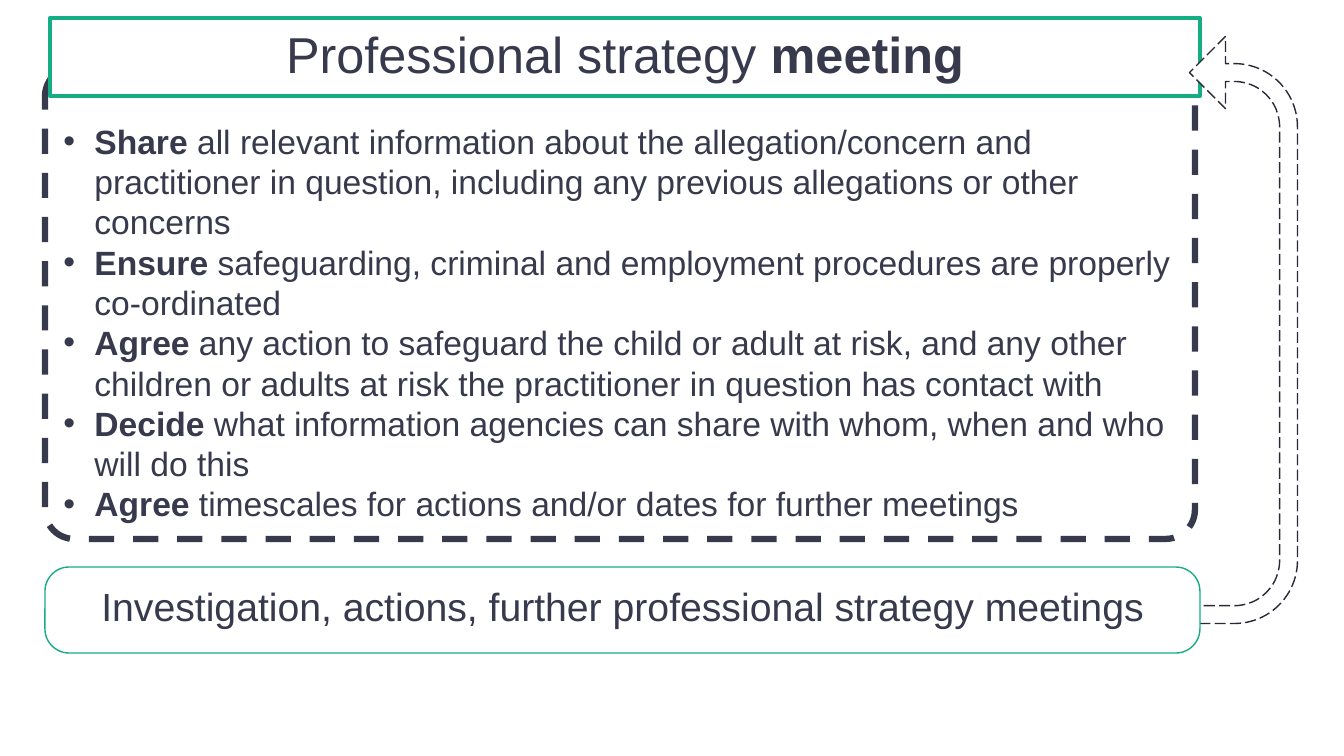
"""Builds the slide on the professional strategy meeting."""
from pptx import Presentation
from pptx.dml.color import RGBColor
from pptx.enum.dml import MSO_LINE
from pptx.enum.shapes import MSO_SHAPE
from pptx.enum.text import MSO_ANCHOR, MSO_AUTO_SIZE, PP_ALIGN
from pptx.oxml import parse_xml
from pptx.oxml.ns import nsdecls
from pptx.util import Pt

ROUND, UTURN = MSO_SHAPE.ROUNDED_RECTANGLE, MSO_SHAPE.U_TURN_ARROW
DASH, LONG = MSO_LINE.DASH, MSO_LINE.LONG_DASH
TOP, MIDDLE = MSO_ANCHOR.TOP, MSO_ANCHOR.MIDDLE
LEFT, CENTER = PP_ALIGN.LEFT, PP_ALIGN.CENTER
FIXED = MSO_AUTO_SIZE.NONE
WIDE, HIGH = 1344, 756
PX = 12192000 / WIDE
THEME = {
    "font": "Arial", "ink": "37394C", "green": "16AD85", "arrow": "292A38",
    "paper": "FFFFFF", "title": 36, "body": 24, "step": 28,
}
POINTS = [
    ("Share", "all relevant information about the allegation/concern and practitioner "
     "in question, including any previous allegations or other concerns"),
    ("Ensure", "safeguarding, criminal and employment procedures are properly co-ordinated"),
    ("Agree", "any action to safeguard the child or adult at risk, and any other children "
     "or adults at risk the practitioner in question has contact with"),
    ("Decide", "what information agencies can share with whom, when and who will do this"),
    ("Agree", "timescales for actions and/or dates for further meetings"),
]


def style(shape, color, width, *bends):
    """Set the fill, outline and adjustments of a shape."""
    shape.shadow.inherit = False
    shape.fill.solid()
    shape.fill.fore_color.rgb = RGBColor.from_string(THEME["paper"])
    shape.line.color.rgb = RGBColor.from_string(THEME[color])
    shape.line.width = Pt(width)
    for i, bend in enumerate(bends):
        shape.adjustments[i] = bend


def write(shape, size, anchor, align, paras):
    """Write paragraphs of (text, bold) runs into a shape."""
    frame = shape.text_frame
    frame.word_wrap = True
    frame.auto_size = FIXED
    frame.vertical_anchor = anchor
    for i, runs in enumerate(paras):
        para = frame.add_paragraph() if i else frame.paragraphs[0]
        para.alignment = align
        for text, bold in runs:
            run = para.add_run()
            run.text = text
            run.font.name = THEME["font"]
            run.font.size = Pt(THEME[size])
            run.font.bold = bold
            run.font.color.rgb = RGBColor.from_string(THEME["ink"])
    return frame


deck = Presentation()
deck.slide_width, deck.slide_height = round(WIDE * PX), round(HIGH * PX)
slide = deck.slides.add_slide(deck.slide_layouts[5])
shapes = slide.shapes

panel = shapes.add_shape(ROUND, *[round(n * PX) for n in (45, 67, 1150, 472)])
style(panel, "ink", 4.5, 0.062)
panel.line.dash_style = DASH
frame = write(panel, "body", TOP, LEFT,
              [[(verb, True), (" " + rest, False)] for verb, rest in POINTS])
frame.margin_top = round(45 * PX)
for para in frame.paragraphs:
    props = para._p.get_or_add_pPr()
    props.set("marL", str(round(31 * PX)))
    props.set("indent", str(round(-31 * PX)))
    props.append(parse_xml(f'<a:buFont {nsdecls("a")} typeface="Arial"/>'))
    props.append(parse_xml(f'<a:buChar {nsdecls("a")} char="•"/>'))

title = shapes.title
title.left, title.top, title.width, title.height = [
    round(n * PX) for n in (50, 18, 1150, 78)]
title._element.spPr.append(parse_xml(
    f'<a:prstGeom {nsdecls("a")} prst="roundRect"><a:avLst/></a:prstGeom>'))
style(title, "green", 3, 0.18)
frame = write(title, "title", MIDDLE, CENTER,
              [[("Professional strategy ", False), ("meeting", True)]])
frame.paragraphs[0].line_spacing = 0.9
frame.paragraphs[0].space_after = Pt(6)
panel._element.addnext(title._element)

loop = shapes.add_shape(UTURN, *[round(n * PX) for n in (932, 258, 587, 144)])
style(loop, "arrow", 1, 0.124, 0.25, 0.25, 0.438, 0.75)
loop.line.dash_style = LONG
loop.rotation = 90
loop._element.spPr.xfrm.set("flipH", "1")

step = shapes.add_shape(ROUND, *[round(n * PX) for n in (45, 567, 1155, 86)])
style(step, "green", 1, 0.281)
frame = write(step, "step", MIDDLE, CENTER,
              [[("Investigation, actions, further professional strategy meetings", False)]])
frame.paragraphs[0].line_spacing = 0.8

deck.save("out.pptx")
